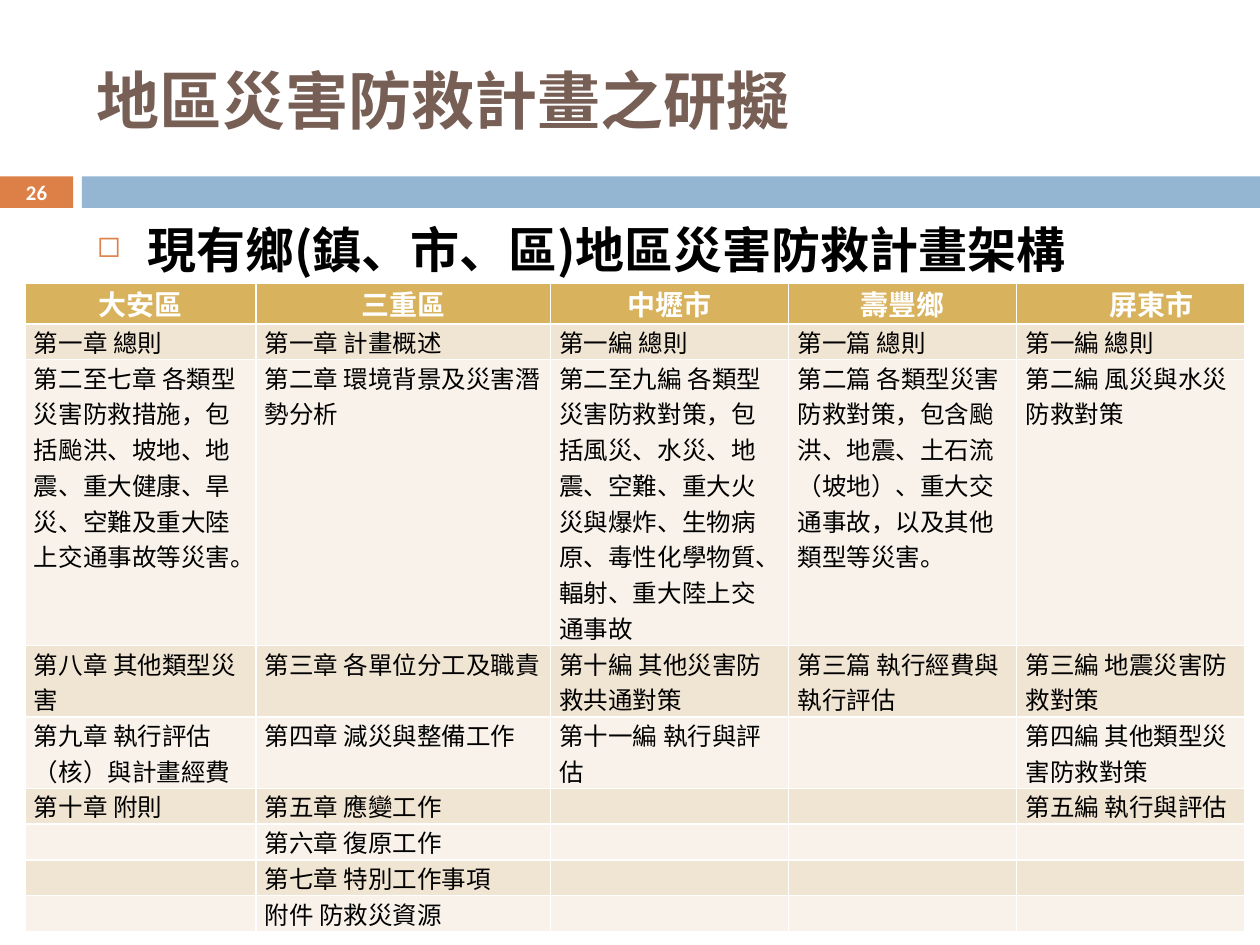
import lxml.etree
import pptx
import pptx.dml.color
import pptx.enum.shapes
import pptx.enum.text
import pptx.oxml.ns
import pptx.util

COLORS = {
    "orange": "DD8047", "blue": "94B6D2", "brown": "775F55", "gold": "D8B25C",
    "sand": "F0E4D2", "cream": "F8F2EA", "white": "FFFFFF", "black": "000000",
}
HEADING_FONT = "Noto Sans CJK SC"
BODY_FONT = "Calibri"
CENTER = pptx.enum.text.PP_ALIGN.CENTER
TOP = pptx.enum.text.MSO_ANCHOR.TOP
MIDDLE = pptx.enum.text.MSO_ANCHOR.MIDDLE

COLUMN_WIDTHS = [18.3, 23.4, 18.9, 18.1, 18.1]
ROW_HEIGHTS = [1.2, 1.2, 7.3] + [1.2] * 6
PLANS = [
    ["大安區", "三重區", "中壢市", "壽豐鄉", "屏東市"],
    ["第一章 總則", "第一章 計畫概述", "第一編 總則", "第一篇 總則", "第一編 總則"],
    [
        "第二至七章 各類型災害防救措施，包括颱洪、坡地、地震、重大健康、旱災、空難及重大陸上交通事故等災害。",
        "第二章 環境背景及災害潛勢分析",
        "第二至九編 各類型災害防救對策，包括風災、水災、地震、空難、重大火災與爆炸、生物病原、毒性化學物質、輻射、重大陸上交通事故",
        "第二篇 各類型災害防救對策，包含颱洪、地震、土石流（坡地）、重大交通事故，以及其他類型等災害。",
        "第二編 風災與水災防救對策",
    ],
    ["第八章 其他類型災害", "第三章 各單位分工及職責", "第十編 其他災害防救共通對策",
     "第三篇 執行經費與執行評估", "第三編 地震災害防救對策"],
    ["第九章 執行評估（核）與計畫經費", "第四章 減災與整備工作", "第十一編 執行與評估",
     "", "第四編 其他類型災害防救對策"],
    ["第十章 附則", "第五章 應變工作", "", "", "第五編 執行與評估"],
    ["", "第六章 復原工作", "", "", ""],
    ["", "第七章 特別工作事項", "", "", ""],
    ["", "附件 防救災資源", "", "", ""],
]


class SlideBuilder:
    grid_columns = 100
    grid_rows = 75

    def __init__(self, presentation):
        self.column = presentation.slide_width / self.grid_columns
        self.row = presentation.slide_height / self.grid_rows
        self.slide = presentation.slides.add_slide(presentation.slide_layouts[6])

    def place(self, left, top, width, height):
        return (int(left * self.column), int(top * self.row),
                int(width * self.column), int(height * self.row))

    def color(self, name):
        return pptx.dml.color.RGBColor.from_string(COLORS[name])

    def fill(self, item, name):
        item.fill.solid()
        item.fill.fore_color.rgb = self.color(name)

    def style(self, font, size, color, bold=True, name=BODY_FONT):
        font.size = pptx.util.Pt(size)
        font.bold = bold
        font.name = name
        font.color.rgb = self.color(color)

    def bar(self, area, color):
        shape = self.slide.shapes.add_shape(
            pptx.enum.shapes.MSO_SHAPE.RECTANGLE, *self.place(*area))
        shape.shadow.inherit = False
        self.fill(shape, color)
        shape.line.fill.background()

    def text(self, area, words, size, color, name=BODY_FONT, align=None, anchor=MIDDLE):
        frame = self.slide.shapes.add_textbox(*self.place(*area)).text_frame
        frame.word_wrap = True
        frame.vertical_anchor = anchor
        paragraph = frame.paragraphs[0]
        paragraph.alignment = align
        paragraph.add_run().text = words
        self.style(paragraph.font, size, color, name=name)
        return paragraph

    def bullet(self, area, words, latin_words, size, color):
        paragraph = self.text(area, words, size, color, HEADING_FONT, anchor=TOP)
        run = paragraph.add_run()
        run.text = latin_words
        run.font.name = BODY_FONT
        paragraph.space_before = pptx.util.Pt(7)
        properties = paragraph._p.get_or_add_pPr()
        hanging = int(4 * self.column)
        properties.set("marL", str(hanging))
        properties.set("indent", str(-hanging))
        qualify = pptx.oxml.ns.qn
        bullet_color = lxml.etree.Element(qualify("a:buClr"))
        lxml.etree.SubElement(bullet_color, qualify("a:srgbClr"), val=COLORS["orange"])
        bullet_size = lxml.etree.Element(qualify("a:buSzPct"), val="60000")
        bullet_mark = lxml.etree.Element(qualify("a:buChar"), char="◻")
        defaults = properties.find(qualify("a:defRPr"))
        for element in (bullet_color, bullet_size, bullet_mark):
            defaults.addprevious(element)

    def table(self, left, top, rows, widths, heights):
        area = self.place(left, top, sum(widths), sum(heights))
        table = self.slide.shapes.add_table(len(rows), len(widths), *area).table
        for column, width in zip(table.columns, widths):
            column.width = int(width * self.column)
        for row, height in zip(table.rows, heights):
            row.height = int(height * self.row)
        for row_index, words_in_row in enumerate(rows):
            for column_index, words in enumerate(words_in_row):
                self.cell(table.cell(row_index, column_index), words, row_index)
        return table

    def cell(self, cell, words, row_index):
        header = row_index == 0
        self.fill(cell, "gold" if header else ("cream", "sand")[row_index % 2])
        cell.margin_left = cell.margin_right = int(0.7 * self.column)
        cell.margin_top = cell.margin_bottom = 0
        paragraph = cell.text_frame.paragraphs[0]
        if words:
            paragraph.add_run().text = words
        else:
            lxml.etree.SubElement(paragraph._p, pptx.oxml.ns.qn("a:endParaRPr"), sz="1400")
        if header:
            paragraph.alignment = CENTER
            self.style(paragraph.font, 16, "white")
        else:
            self.style(paragraph.font, 14, "black", bold=False)


def main():
    presentation = pptx.Presentation()
    presentation.slide_width = pptx.util.Inches(10)
    presentation.slide_height = pptx.util.Inches(7.5)
    builder = SlideBuilder(presentation)
    builder.bar((0, 14, 5.8, 2.5), "orange")
    builder.bar((6.5, 14, 93.5, 2.5), "blue")
    table = builder.table(2, 22.5, PLANS, COLUMN_WIDTHS, ROW_HEIGHTS)
    last_header = table.cell(0, len(COLUMN_WIDTHS) - 1).text_frame.paragraphs[0]
    last_header._p.get_or_add_pPr().set("indent", str(int(3.3 * builder.column)))
    builder.text((0, 13.9, 5.8, 2.7), "26", 11.9, "white", align=CENTER)
    builder.text((6.7, 2.5, 89.2, 10.8), "地區災害防救計畫之研擬", 36, "brown", HEADING_FONT)
    builder.bullet((6.7, 16.9, 89.2, 6.4), "現有鄉(鎮、市、區)", "地區災害防救計畫架構", 28, "black")
    presentation.save("out.pptx")


if __name__ == "__main__":
    main()
